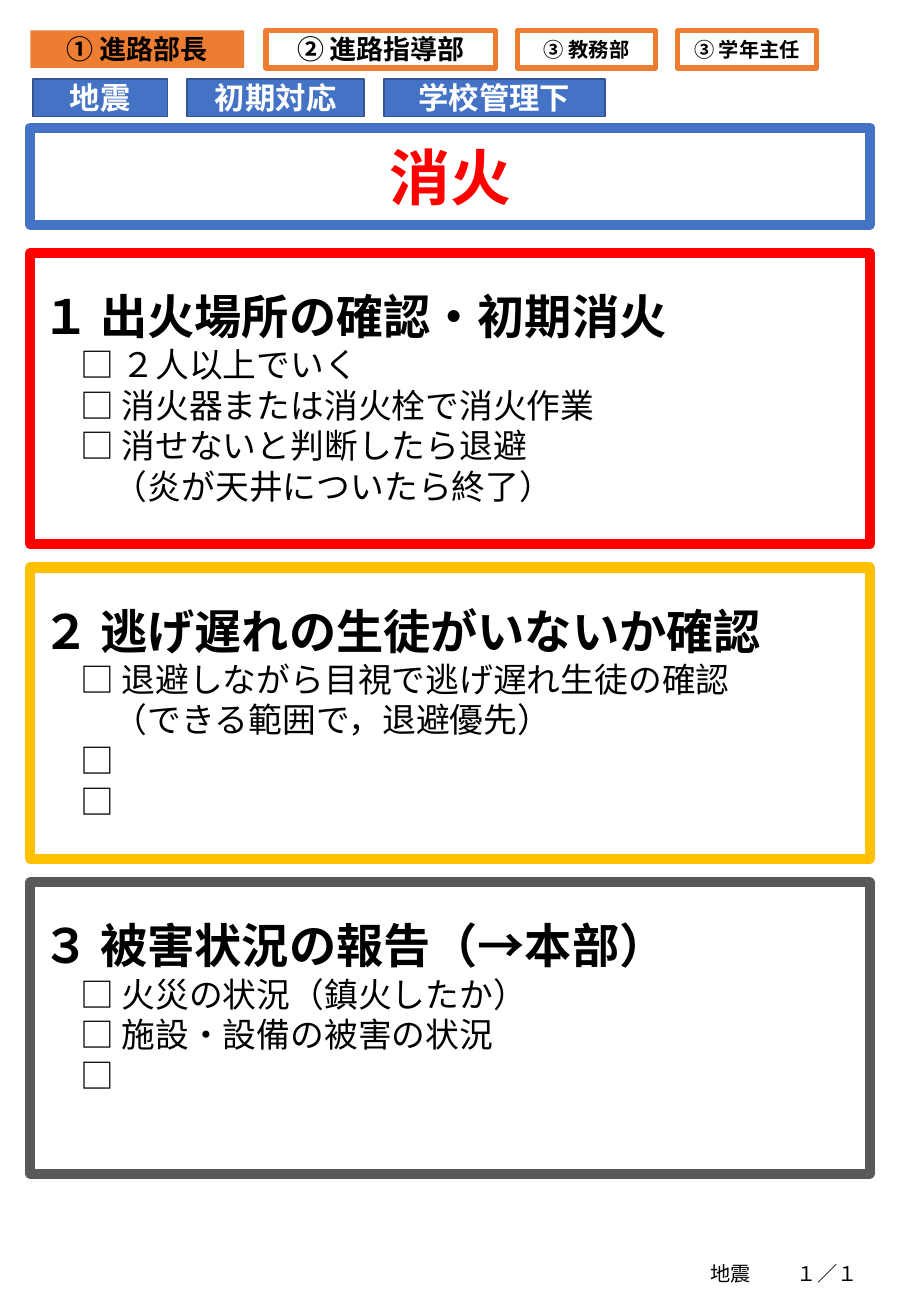
from lxml.etree import SubElement
from pptx import Presentation
from pptx.dml.color import RGBColor
from pptx.enum.shapes import MSO_SHAPE
from pptx.enum.text import MSO_ANCHOR, MSO_AUTO_SIZE, PP_ALIGN
from pptx.oxml.ns import qn
from pptx.util import Inches, Pt

SANS = "Noto Sans CJK JP"
ORANGE, BLUE, NAVY = "ED7D31", "4472C4", "325491"
WHITE, BLACK, RED = "FFFFFF", "000000", "FF0000"
LEFT, WIDE, ROW = 0.25, 6.91, 0.31

ROLES = [  # text, width, size, fill, line
    ("① 進路部長", 1.76, 16, ORANGE, None),
    ("② 進路指導部", 1.89, 16, WHITE, ORANGE),
    ("③ 教務部", 1.14, 12, WHITE, ORANGE),
    ("③ 学年主任", 1.14, 12, WHITE, ORANGE),
]
TAGS = [("地震", 1.11), ("初期対応", 1.46), ("学校管理下", 1.82)]
CARDS = [  # line colour, heading, items
    (RED, "１ 出火場所の確認・初期消火",
     ["□ ２人以上でいく", "□ 消火器または消火栓で消火作業",
      "□ 消せないと判断したら退避", "　（炎が天井についたら終了）"]),
    ("FFC000", "２ 逃げ遅れの生徒がいないか確認",
     ["□ 退避しながら目視で逃げ遅れ生徒の確認",
      "　（できる範囲で，退避優先）", "□", "□"]),
    ("595959", "３ 被害状況の報告（→本部）",
     ["□ 火災の状況（鎮火したか）", "□ 施設・設備の被害の状況", "□"]),
]


def color(code):
    return RGBColor.from_string(code)


def apply(target, style):
    for name, value in style.items():
        setattr(target, name, value)


def place(shape, x, y, w, h):
    apply(shape, {"left": Inches(x), "top": Inches(y),
                  "width": Inches(w), "height": Inches(h)})


def paint(shape, fill, line, weight):
    shape.fill.solid()
    shape.fill.fore_color.rgb = color(fill)
    if line:
        shape.line.color.rgb = color(line)
        shape.line.width = Pt(weight)
    else:
        shape.line.fill.background()


def frame(shape, anchor):
    apply(shape.text_frame, {"word_wrap": True, "vertical_anchor": anchor,
                             "auto_size": MSO_AUTO_SIZE.NONE})


def write(para, text, size, ink=BLACK, bold=True, font=SANS,
          align=PP_ALIGN.CENTER, space=1.0):
    apply(para, {"alignment": align, "line_spacing": space,
                 "space_before": Pt(0)})
    run = para.add_run()
    run.text = text
    apply(run.font, {"size": Pt(size), "bold": bold, "name": font})
    run.font.color.rgb = color(ink)
    # East Asian glyphs use the same font
    SubElement(run.font._element, qn("a:ea"), typeface=font)


def indent(para, inches):
    props = para._p.get_or_add_pPr()
    props.set("marL", str(Inches(inches)))
    props.set("indent", "0")
    SubElement(props, qn("a:buNone"))


def label(slide, x, y, w, text, size, fill, line, weight, ink):
    box = slide.shapes.add_shape(MSO_SHAPE.RECTANGLE, Inches(x), Inches(y),
                                 Inches(w), Inches(ROW))
    box.shadow.inherit = False
    paint(box, fill, line, weight)
    frame(box, MSO_ANCHOR.MIDDLE)
    write(box.text_frame.paragraphs[0], text, size, ink)


def banner(shape, text):
    place(shape, LEFT, 1.05, WIDE, 0.8)
    paint(shape, WHITE, BLUE, 6)
    frame(shape, MSO_ANCHOR.MIDDLE)
    write(shape.text_frame.paragraphs[0], text, 36, RED)


def card(shape, y, line, head, items):
    place(shape, LEFT, y, WIDE, 2.4)
    paint(shape, WHITE, line, 6)
    frame(shape, MSO_ANCHOR.TOP)
    para = shape.text_frame.paragraphs[0]
    write(para, head, 28, align=PP_ALIGN.LEFT, space=1.5)
    indent(para, 0)
    for item in items:
        para = shape.text_frame.add_paragraph()
        write(para, item, 20, bold=False, align=PP_ALIGN.LEFT)
        indent(para, 0.31)


def note(slide, x, text, align):
    box = slide.shapes.add_textbox(Inches(x), Inches(10.33),
                                   Inches(0.71), Inches(ROW))
    frame(box, MSO_ANCHOR.TOP)
    write(box.text_frame.paragraphs[0], text, 12, bold=False,
          font="Calibri", align=align)


def main():
    deck = Presentation()
    apply(deck, {"slide_width": Inches(7.5), "slide_height": Inches(10.83)})
    slide = deck.slides.add_slide(deck.slide_layouts[4])

    # Title and the three checklists
    title, *bodies = slide.placeholders
    banner(title, "消火")
    for i, (line, head, items) in enumerate(CARDS):
        card(bodies[i], 2.08 + 2.59 * i, line, head, items)
    for spare in bodies[len(CARDS):]:
        spare._element.getparent().remove(spare._element)

    # People in charge
    x = LEFT
    for text, w, size, fill, line in ROLES:
        label(slide, x, 0.25, w, text, size, fill, line, 3, BLACK)
        x += w + 0.18

    # Situation tags
    x = 0.27
    for text, w in TAGS:
        label(slide, x, 0.65, w, text, 18, BLUE, NAVY, 1, WHITE)
        x += w + 0.16

    # Footer
    note(slide, 5.75, "地震", PP_ALIGN.LEFT)
    note(slide, 6.45, "１／１", PP_ALIGN.RIGHT)
    deck.save("out.pptx")


if __name__ == "__main__":
    main()
